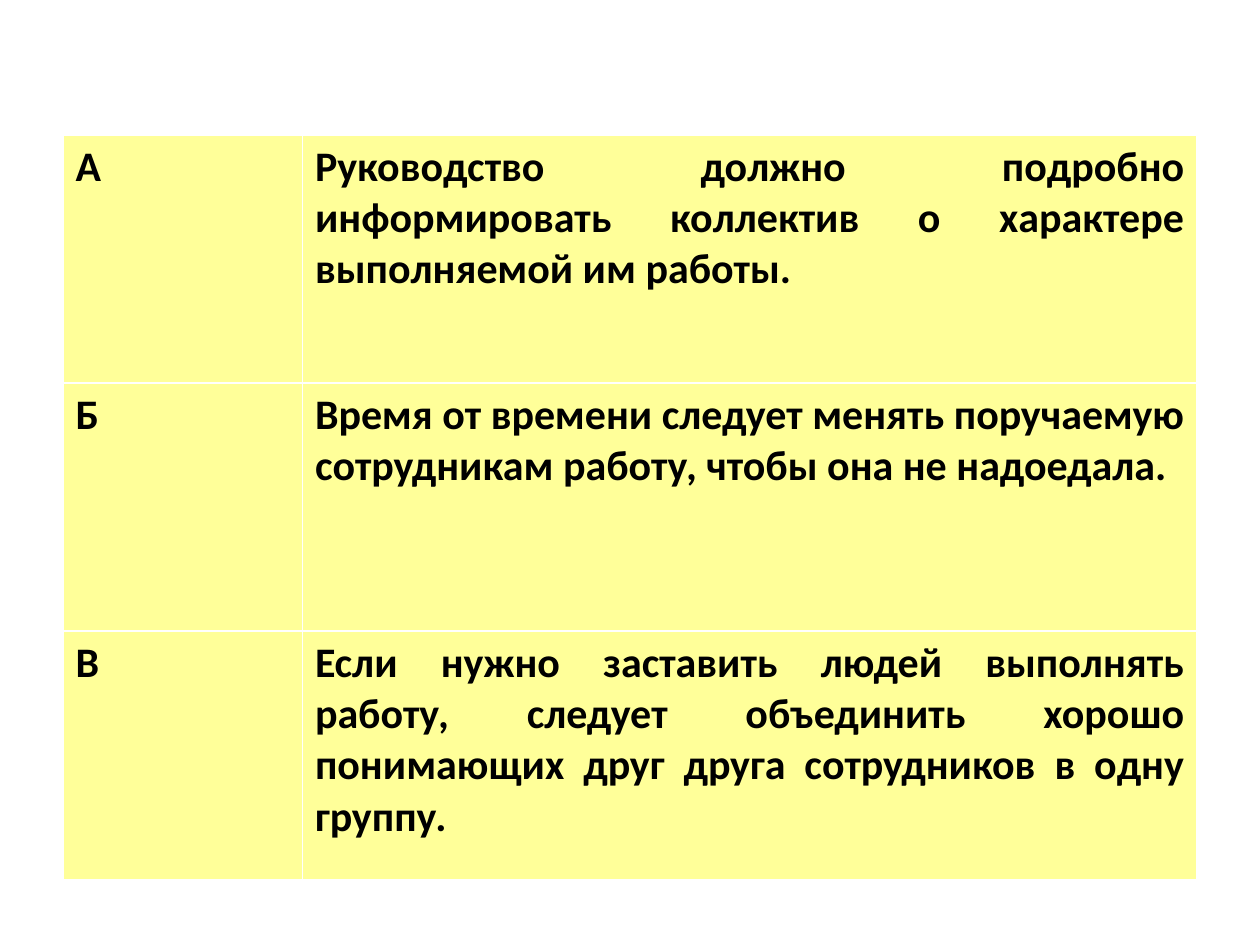
from pptx import Presentation
from pptx.dml.color import RGBColor
from pptx.enum.text import PP_ALIGN
from pptx.util import Inches, Pt

JUSTIFY = PP_ALIGN.JUSTIFY
BLANK_LAYOUT = 6
ROW_HEIGHT = 1.97
COLUMN_WIDTHS = [1.9, 7.1]
STATEMENTS = [
    ("А", "Руководство должно подробно информировать коллектив о характере выполняемой им работы."),
    ("Б", "Время от времени следует менять поручаемую сотрудникам работу, чтобы она не надоедала."),
    ("В", "Если нужно заставить людей выполнять работу, следует объединить хорошо "
          "понимающих друг друга сотрудников в одну группу."),
]
FONT_FORMAT = {"name": "Calibri", "size": Pt(24), "bold": True}


def color(hex_string):
    return RGBColor.from_string(hex_string)


presentation = Presentation()
presentation.slide_width = Inches(10)
presentation.slide_height = Inches(7.5)
slide = presentation.slides.add_slide(presentation.slide_layouts[BLANK_LAYOUT])

# Table of statements; the default table style draws the white borders
table = slide.shapes.add_table(
    len(STATEMENTS), len(COLUMN_WIDTHS), Inches(0.5), Inches(1.07),
    Inches(sum(COLUMN_WIDTHS)), Inches(ROW_HEIGHT * len(STATEMENTS))).table
for column, width in zip(table.columns, COLUMN_WIDTHS):
    column.width = Inches(width)

# Cell text and fill
for row, statement in zip(table.rows, STATEMENTS):
    row.height = Inches(ROW_HEIGHT)
    for cell, text in zip(row.cells, statement):
        cell.fill.solid()
        cell.fill.fore_color.rgb = color("FFFF99")
        paragraph = cell.text_frame.paragraphs[0]
        paragraph.alignment = JUSTIFY
        run = paragraph.add_run()
        run.text = text
        for name, value in FONT_FORMAT.items():
            setattr(run.font, name, value)
        run.font.color.rgb = color("000000")

presentation.save("out.pptx")
